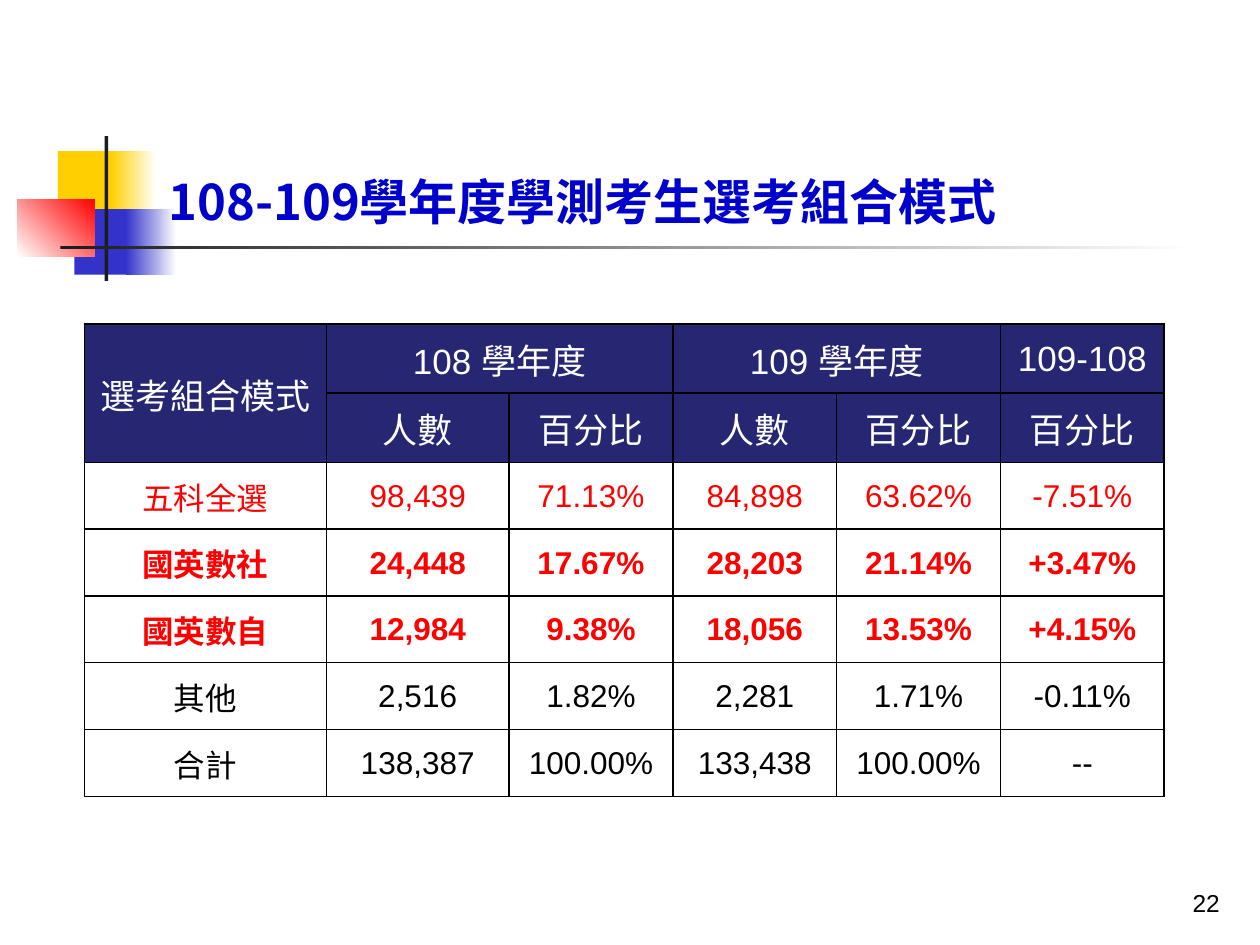
from lxml import etree
from pptx import Presentation
from pptx import util as u
from pptx.dml.color import RGBColor
from pptx.enum import shapes, text
from pptx.oxml.ns import qn

COLORS = {
    "yellow": "FFCF01", "blue": "3333CC", "red": "FF0000", "dark": "1C1C1C",
    "white": "FFFFFF", "black": "000000", "title": "0000CC", "header": "262673",
}
LATIN, ASIAN = "Arial", "Noto Sans CJK SC"

SOLID_BLOCKS_AND_FADES = [
    ((0.46, 1.2, 0.48, 0.52), ("yellow",), 0),
    ((0.88, 1.2, 0.36, 0.52), ("yellow", "white"), 0),
    ((0.59, 1.66, 0.46, 0.52), ("blue",), 0),
    ((1, 1.66, 0.4, 0.52), ("blue", "white"), 0),
    ((0.14, 1.58, 0.61, 0.46), ("white", "red"), 45),
    ((0.83, 1.08, 0.03, 1.15), ("dark",), 0),
    ((0.48, 1.95, 9, 0.03), ("dark", "white"), 0),
]

COLUMN_WIDTHS = [1.92, 1.45, 1.3, 1.3, 1.3, 1.3]
HEADER_ROWS = [
    ["選考組合模式", "108 學年度", "", "109 學年度", "", "109-108"],
    ["", "人數", "百分比", "人數", "百分比", "百分比"],
]
BODY_ROWS = [
    ["五科全選", "98,439", "71.13%", "84,898", "63.62%", "-7.51%"],
    ["國英數社", "24,448", "17.67%", "28,203", "21.14%", "+3.47%"],
    ["國英數自", "12,984", "9.38%", "18,056", "13.53%", "+4.15%"],
    ["其他", "2,516", "1.82%", "2,281", "1.71%", "-0.11%"],
    ["合計", "138,387", "100.00%", "133,438", "100.00%", "--"],
]
BODY_STYLES = [("red", False), ("red", True), ("red", True),
               ("black", False), ("black", False)]
HEADER_MERGES = [((0, 0), (1, 0)), ((0, 1), (0, 2)), ((0, 3), (0, 4))]


def rgb(name):
    return RGBColor.from_string(COLORS[name])


def inches(values):
    return [u.Inches(value) for value in values]


def style_paragraph(para, size, color, bold=False, font=LATIN, align=None):
    para.alignment = align
    para.font.size = u.Pt(size)
    para.font.bold = bold
    para.font.name = font
    para.font.color.rgb = rgb(color)
    properties = para._p.pPr.find(qn("a:defRPr"))
    etree.SubElement(properties, qn("a:ea"), typeface=ASIAN)


def add_block(page, place, colors, angle):
    block = page.shapes.add_shape(shapes.MSO_SHAPE.RECTANGLE, *inches(place))
    block.shadow.inherit = False
    block.line.fill.background()
    if len(colors) == 1:
        block.fill.solid()
        block.fill.fore_color.rgb = rgb(colors[0])
        return
    block.fill.gradient()
    block.fill.gradient_angle = angle
    for stop, position, color in zip(block.fill.gradient_stops, (0, 1), colors):
        stop.position = position
        stop.color.rgb = rgb(color)


def add_text(page, place, words, **style):
    box = page.shapes.add_textbox(*inches(place))
    frame = box.text_frame
    frame.word_wrap = True
    frame.vertical_anchor = text.MSO_ANCHOR.BOTTOM
    para = frame.paragraphs[0]
    para.text = words
    style_paragraph(para, **style)


def add_borders(cell):
    properties = cell._tc.get_or_add_tcPr()
    for index, side in enumerate(("lnL", "lnR", "lnT", "lnB")):
        line = etree.Element(qn(f"a:{side}"), w=str(u.Pt(1)))
        fill = etree.SubElement(line, qn("a:solidFill"))
        etree.SubElement(fill, qn("a:srgbClr"), val=COLORS["black"])
        properties.insert(index, line)


def fill_cell(cell, words, size, color, bold, background):
    cell.margin_left = cell.margin_right = cell.margin_top = u.Inches(0.01)
    cell.margin_bottom = 0
    cell.vertical_anchor = text.MSO_ANCHOR.MIDDLE
    if background:
        cell.fill.solid()
        cell.fill.fore_color.rgb = rgb(background)
    else:
        cell.fill.background()
    add_borders(cell)
    para = cell.text_frame.paragraphs[0]
    para.text = words
    style_paragraph(para, size, color, bold, align=text.PP_ALIGN.CENTER)


def add_score_table(page):
    rows = HEADER_ROWS + BODY_ROWS
    styles = [(20, "white", False, "header")] * len(HEADER_ROWS)
    styles += [(18, color, bold, None) for color, bold in BODY_STYLES]
    frame = page.shapes.add_table(len(rows), len(COLUMN_WIDTHS),
                                  *inches((0.67, 2.57, 8.58, 3.74)))
    table = frame.table
    table.first_row = table.horz_banding = False
    for column, width in zip(table.columns, COLUMN_WIDTHS):
        column.width = u.Inches(width)
    for index, (row, values, style) in enumerate(zip(table.rows, rows, styles)):
        row.height = u.Inches(0.55 if index < len(HEADER_ROWS) else 0.53)
        for cell, words in zip(row.cells, values):
            fill_cell(cell, words, *style)
    for first, last in HEADER_MERGES:
        table.cell(*first).merge(table.cell(*last))


def main():
    deck = Presentation()
    deck.slide_width, deck.slide_height = inches((10, 7.5))
    page = deck.slides.add_slide(deck.slide_layouts[6])
    for place, colors, angle in SOLID_BLOCKS_AND_FADES:
        add_block(page, place, colors, angle)
    add_text(page, (7.7, 6.83, 2.08, 0.5), "22", size=14, color="black",
             align=text.PP_ALIGN.RIGHT)
    add_text(page, (1.24, 0.28, 8.52, 1.6), "108-109學年度學測考生選考組合模式",
             size=28, color="title", bold=True, font=ASIAN)
    add_score_table(page)
    deck.save("out.pptx")


if __name__ == "__main__":
    main()
